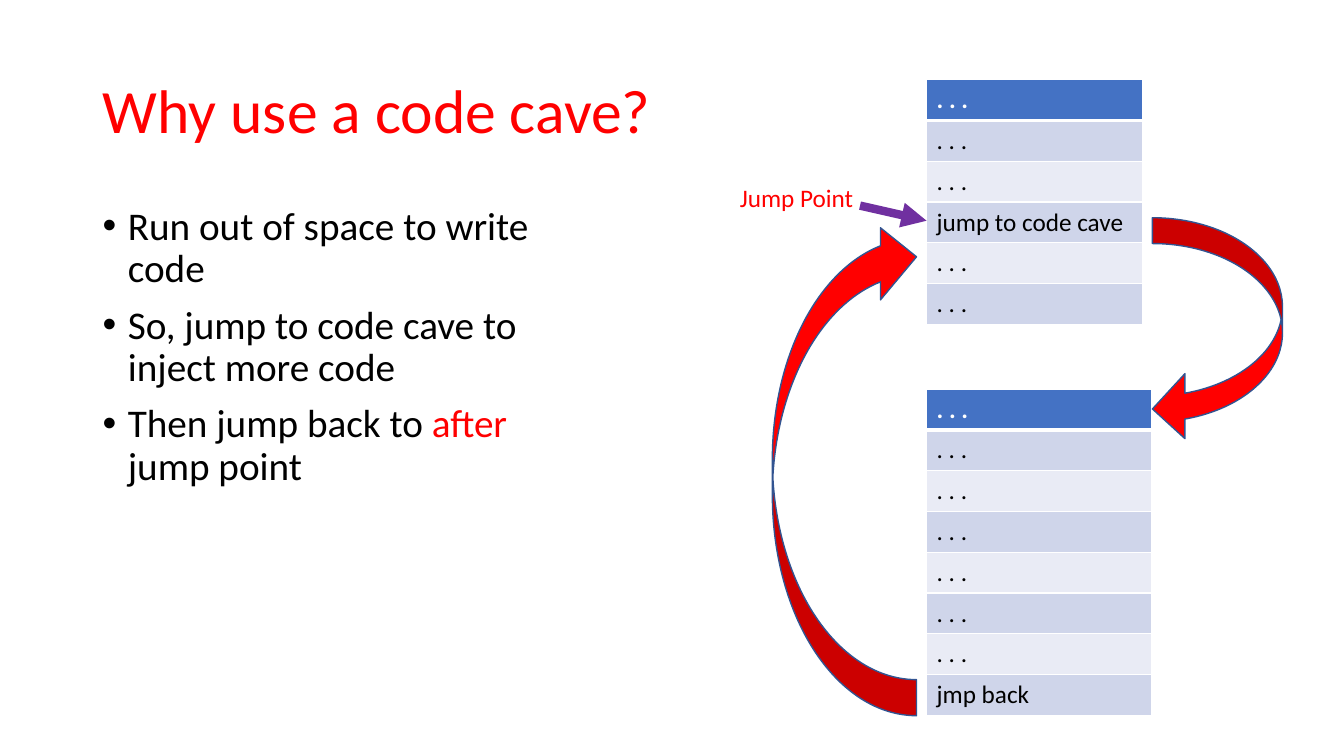
from dataclasses import dataclass

from lxml import etree
from pptx import Presentation
from pptx.dml.color import RGBColor
from pptx.enum.shapes import MSO_CONNECTOR, MSO_SHAPE
from pptx.enum.text import MSO_ANCHOR, MSO_AUTO_SIZE, PP_ALIGN
from pptx.oxml.ns import qn
from pptx.util import Inches, Pt

CURVED_ARROW = MSO_SHAPE.CURVED_LEFT_ARROW
STRAIGHT = MSO_CONNECTOR.STRAIGHT
MIDDLE = MSO_ANCHOR.MIDDLE
LEFT = PP_ALIGN.LEFT
NO_AUTOFIT = MSO_AUTO_SIZE.NONE
FIT_SHAPE = MSO_AUTO_SIZE.SHAPE_TO_FIT_TEXT

RED = RGBColor(0xFF, 0x00, 0x00)
BLACK = RGBColor(0x00, 0x00, 0x00)
WHITE = RGBColor(0xFF, 0xFF, 0xFF)
PURPLE = RGBColor(0x70, 0x30, 0xA0)
OUTLINE_BLUE = RGBColor(0x32, 0x54, 0x91)
HEADER_BLUE = RGBColor(0x44, 0x72, 0xC4)
BAND_FILLS = (RGBColor(0xE9, 0xEB, 0xF5), RGBColor(0xCF, 0xD5, 0xEA))

FONT = "Calibri"
DOTS = ". . ."
ROW_HEIGHT = 0.405


@dataclass(frozen=True)
class Box:
    left: float
    top: float
    width: float
    height: float

    def lengths(self) -> tuple:
        return tuple(Inches(n) for n in (self.left, self.top, self.width, self.height))


@dataclass(frozen=True)
class MemoryBlock:
    left: float
    top: float
    width: float
    rows: tuple[str, ...]


@dataclass(frozen=True)
class JumpArrow:
    box: Box
    shaft: float
    rotation: int


TITLE_BOX = Box(0.92, 0.4, 11.5, 1.45)
BODY_BOX = Box(0.92, 2, 5.1, 4.76)
LABEL_BOX = Box(7.24, 1.76, 1.34, 0.4)

BULLETS = (
    (("Run out of space to write code", BLACK),),
    (("So, jump to code cave to inject more code", BLACK),),
    (("Then jump back to ", BLACK), ("after", RED), (" jump point", BLACK)),
)
MEMORY_BLOCKS = (
    MemoryBlock(9.19, 0.79, 2.14, (DOTS,) * 3 + ("jump to code cave",) + (DOTS,) * 2),
    MemoryBlock(9.19, 3.86, 2.23, (DOTS,) * 7 + ("jmp back",)),
)
JUMP_ARROWS = (
    JumpArrow(Box(11.43, 2.16, 1.29, 2.22), 0.199, 0),
    JumpArrow(Box(7.66, 2.19, 1.43, 4.91), 0.25, 180),
)


def add_run(paragraph, text: str, size: int, color: RGBColor, bold: bool = False) -> None:
    run = paragraph.add_run()
    run.text = text
    font_format = {"name": FONT, "size": Pt(size), "bold": bold}
    for name, value in font_format.items():
        setattr(run.font, name, value)
    run.font.color.rgb = color


def format_title(title) -> None:
    title.left, title.top, title.width, title.height = TITLE_BOX.lengths()
    frame = title.text_frame
    frame.vertical_anchor = MIDDLE
    frame.auto_size = NO_AUTOFIT
    paragraph = frame.paragraphs[0]
    paragraph.alignment = LEFT
    paragraph.line_spacing = 0.9
    add_run(paragraph, "Why use a code cave?", 44, RED)


def add_bullets(slide) -> None:
    frame = slide.shapes.add_textbox(*BODY_BOX.lengths()).text_frame
    frame.word_wrap = True
    for index, runs in enumerate(BULLETS):
        paragraph = frame.add_paragraph() if index else frame.paragraphs[0]
        paragraph.line_spacing = 0.9
        paragraph.space_before = Pt(10)
        properties = paragraph._p.get_or_add_pPr()
        properties.set("marL", str(Inches(0.25)))
        properties.set("indent", str(Inches(-0.25)))
        etree.SubElement(properties, qn("a:buFont"), typeface="Arial")
        etree.SubElement(properties, qn("a:buChar"), char="•")
        for text, color in runs:
            add_run(paragraph, text, 28, color)


def set_borders(cell, bottom_width: int) -> None:
    """Give the cell white borders, placed ahead of its fill as the schema asks."""
    properties = cell._tc.get_or_add_tcPr()
    widths = {"a:lnL": 1, "a:lnR": 1, "a:lnT": 1, "a:lnB": bottom_width}
    for index, (tag, width) in enumerate(widths.items()):
        border = etree.Element(qn(tag), w=str(Pt(width)))
        fill = etree.SubElement(border, qn("a:solidFill"))
        etree.SubElement(fill, qn("a:srgbClr"), val=str(WHITE))
        properties.insert(index, border)


def add_memory_block(slide, block: MemoryBlock) -> None:
    box = Box(block.left, block.top, block.width, ROW_HEIGHT * len(block.rows))
    table = slide.shapes.add_table(len(block.rows), 1, *box.lengths()).table
    for index, text in enumerate(block.rows):
        is_header = index == 0
        cell = table.cell(index, 0)
        cell.fill.solid()
        cell.fill.fore_color.rgb = HEADER_BLUE if is_header else BAND_FILLS[index % 2]
        set_borders(cell, 3 if is_header else 1)
        if index == 1:
            cell._tc.tcPr.find(qn("a:lnT")).set("w", str(Pt(3)))
        color = WHITE if is_header else BLACK
        add_run(cell.text_frame.paragraphs[0], text, 18, color, is_header)


def add_jump_arrow(slide, arrow: JumpArrow) -> None:
    shape = slide.shapes.add_shape(CURVED_ARROW, *arrow.box.lengths())
    shape.adjustments[0] = arrow.shaft
    shape.rotation = arrow.rotation
    shape.shadow.inherit = False
    shape.fill.solid()
    shape.fill.fore_color.rgb = RED
    shape.line.color.rgb = OUTLINE_BLUE
    shape.line.width = Pt(1)


def add_jump_point(slide) -> None:
    ends = (Inches(n) for n in (8.53, 2.04, 9.19, 2.19))
    pointer = slide.shapes.add_connector(STRAIGHT, *ends)
    pointer.line.color.rgb = PURPLE
    pointer.line.width = Pt(6)
    etree.SubElement(pointer.line._get_or_add_ln(), qn("a:tailEnd"), type="triangle")
    etree.SubElement(pointer._element.spPr, qn("a:effectLst"))

    frame = slide.shapes.add_textbox(*LABEL_BOX.lengths()).text_frame
    frame.word_wrap = False
    frame.auto_size = FIT_SHAPE
    add_run(frame.paragraphs[0], "Jump Point", 18, RED)


def main() -> None:
    presentation = Presentation()
    presentation.slide_width = Inches(13.33)
    presentation.slide_height = Inches(7.5)
    title_only = presentation.slide_layouts.get_by_name("Title Only")
    slide = presentation.slides.add_slide(title_only)
    format_title(slide.shapes.title)
    add_bullets(slide)
    for block in MEMORY_BLOCKS:
        add_memory_block(slide, block)
    for arrow in JUMP_ARROWS:
        add_jump_arrow(slide, arrow)
    add_jump_point(slide)
    presentation.save("out.pptx")


if __name__ == "__main__":
    main()
